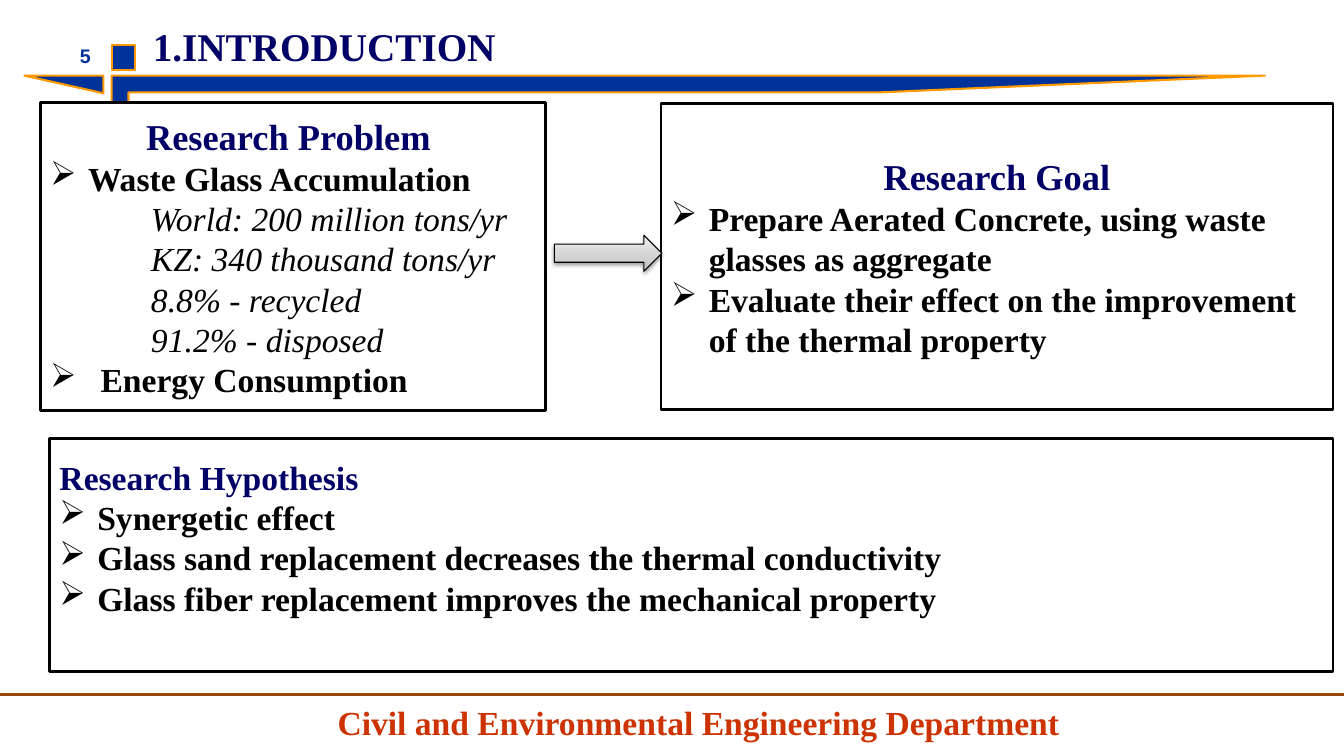
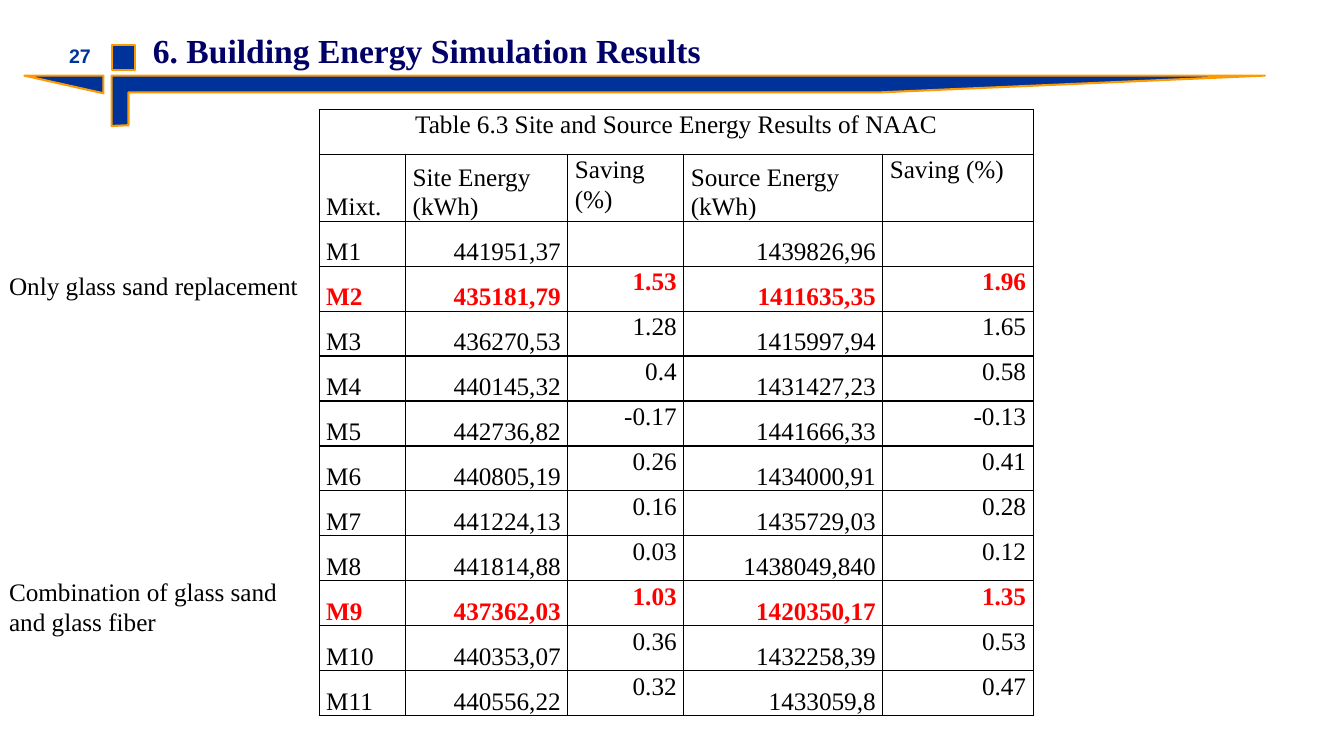
from dataclasses import dataclass

from pptx import Presentation, util as u
from pptx.dml.color import RGBColor
from pptx.enum import shapes, text
from pptx.oxml import parse_xml
from pptx.oxml.ns import nsdecls, qn

# Grid: 160 columns by 90 rows over the whole slide
COLUMNS, ROWS = 160, 90
CELL = u.Inches(7.5) // ROWS


@dataclass(frozen=True)
class Theme:
    serif: str = "Times New Roman"
    sans: str = "Arial"
    navy: str = "000066"
    blue: str = "003399"
    orange: str = "FF9900"
    brown: str = "974706"
    rust: str = "CC3300"
    red: str = "FF0000"
    black: str = "000000"
    white: str = "FFFFFF"
    title: int = 28
    heading: int = 26
    body: int = 24
    small: int = 18
    number: int = 14


THEME = Theme()
LEFT, CENTER, RIGHT = text.PP_ALIGN.LEFT, text.PP_ALIGN.CENTER, text.PP_ALIGN.RIGHT
TOP, MIDDLE, BOTTOM = text.MSO_ANCHOR.TOP, text.MSO_ANCHOR.MIDDLE, text.MSO_ANCHOR.BOTTOM


@dataclass(frozen=True)
class Line:
    """One paragraph; margin and hanging indent are in grid cells."""
    words: str
    size: int = THEME.body
    color: str = THEME.black
    bold: bool = False
    italic: bool = False
    font: str = THEME.serif
    align: int = LEFT
    margin: float = 0
    bullet: bool = False
    spacing: float = 1.0


def heading(words, size=THEME.heading, align=CENTER):
    return Line(words, size, THEME.navy, bold=True, align=align)


def bullet(words, margin=4.5):
    return Line(words, bold=True, margin=margin, bullet=True)


def detail(words):
    return Line(words, italic=True, margin=12)


def grid(*cells):
    return [round(cell * CELL) for cell in cells]


def color(value):
    return RGBColor.from_string(value)


# Text
def write(frame, lines, anchor=TOP, wrap=True):
    frame.word_wrap = wrap
    frame.auto_size = text.MSO_AUTO_SIZE.NONE
    frame.vertical_anchor = anchor
    for index, line in enumerate(lines):
        paragraph = frame.add_paragraph() if index else frame.paragraphs[0]
        write_paragraph(paragraph, line)


def write_paragraph(paragraph, line):
    paragraph.alignment = line.align
    paragraph.line_spacing = line.spacing
    properties = paragraph._p.get_or_add_pPr()
    if line.margin:
        margin, = grid(line.margin)
        properties.set("marL", str(margin))
        properties.set("indent", str(-margin if line.bullet else 0))
    if line.bullet:
        properties.append(parse_xml(f'<a:buChar {nsdecls("a")} char="➢"/>'))
    run = paragraph.add_run()
    run.text = line.words
    font = run.font
    font.name, font.size = line.font, u.Pt(line.size)
    font.bold, font.italic = line.bold, line.italic
    font.color.rgb = color(line.color)


def add_text(slide, place, line, anchor=TOP, wrap=True):
    box = slide.shapes.add_textbox(*grid(*place))
    write(box.text_frame, [line], anchor, wrap)


# Shapes
def add_shape(slide, kind, place, fill, outline, width):
    shape = slide.shapes.add_shape(kind, *grid(*place))
    shape.shadow.inherit = False
    shape.fill.solid()
    shape.fill.fore_color.rgb = color(fill)
    shape.line.color.rgb = color(outline)
    shape.line.width = u.Pt(width)
    return shape


def add_panel(slide, place, lines, spare_rows=0):
    panel = add_shape(slide, shapes.MSO_SHAPE.RECTANGLE, place,
                      THEME.white, THEME.black, 2)
    write(panel.text_frame, lines, MIDDLE)
    panel.text_frame.margin_bottom, = grid(0.6 + spare_rows)


def add_shaded_arrow(slide, place):
    arrow = add_shape(slide, shapes.MSO_SHAPE.RIGHT_ARROW, place,
                      THEME.white, THEME.black, 0.75)
    arrow.fill.gradient()
    arrow.fill.gradient_angle = 90
    properties = arrow.element.spPr
    stops = "".join(
        f'<a:gs pos="{share * 1000}"><a:srgbClr val="{value}"/></a:gs>'
        for share, value in ((0, "BDBDBD"), (35, "D1D1D1"), (100, "EEEEEE")))
    gradient = properties.find(qn("a:gradFill"))
    gradient.replace(gradient.find(qn("a:gsLst")),
                     parse_xml(f'<a:gsLst {nsdecls("a")}>{stops}</a:gsLst>'))
    properties.find(qn("a:effectLst")).append(parse_xml(
        f'<a:outerShdw {nsdecls("a")} blurRad="{u.Pt(3.1)}" dist="{u.Pt(1.6)}" '
        f'dir="5400000" rotWithShape="0"><a:srgbClr val="{THEME.black}">'
        '<a:alpha val="38000"/></a:srgbClr></a:outerShdw>'))


# Parts that the slides share
def add_slide(presentation, number, title, size, place):
    slide = presentation.slides.add_slide(presentation.slide_layouts[5])
    preset = shapes.MSO_SHAPE
    for kind, at, turn in ((preset.HALF_FRAME, (13.3, 9, 137.3, 6), 0),
                           (preset.RIGHT_TRIANGLE, (2.9, 9, 9.4, 2.1), 180),
                           (preset.RECTANGLE, (13.3, 5.35, 2.8, 3), 0)):
        add_shape(slide, kind, at, THEME.blue, THEME.orange, 1.5).rotation = turn
    add_text(slide, (4, 4.2, 8, 4.8),
             Line(number, THEME.number, THEME.blue, bold=True,
                  font=THEME.sans, align=RIGHT), MIDDLE)
    holder = slide.shapes.title
    holder.left, holder.top, holder.width, holder.height = grid(*place)
    write(holder.text_frame, [heading(title, size, LEFT)])
    return slide


def add_footer(slide, words):
    rule = slide.shapes.add_connector(
        shapes.MSO_CONNECTOR.STRAIGHT, *grid(0, 82.7, COLUMNS, 82.7))
    rule.line.color.rgb = color(THEME.brown)
    rule.line.width = u.Pt(2)
    rule._element.spPr.append(parse_xml(f'<a:effectLst {nsdecls("a")}/>'))
    add_text(slide, (39, 83.9, 89.2, 5),
             Line(words, color=THEME.rust, bold=True, spacing=0.8), wrap=False)


# Table
def format_cell(cell, words, align, anchor, strong):
    cell.margin_left, cell.margin_right = grid(0.84, 0.84)
    cell.margin_top = cell.margin_bottom = 0
    cell.vertical_anchor = anchor
    properties = cell._tc.get_or_add_tcPr()
    for side in "LRTB":
        properties.append(parse_xml(
            f'<a:ln{side} {nsdecls("a")} w="{u.Pt(1)}"><a:solidFill>'
            f'<a:srgbClr val="{THEME.black}"/></a:solidFill></a:ln{side}>'))
    cell.fill.background()
    if words:
        write_paragraph(cell.text_frame.paragraphs[0],
                        Line(words, THEME.small, THEME.red if strong else THEME.black,
                             bold=strong, align=align, spacing=1.07))


def add_results_table(slide, caption, header, records, widths, highlighted):
    rows = [(caption,) + ("",) * (len(header) - 1), header, *records]
    heights = [5.35, 8] + [5.35] * len(records)
    table = slide.shapes.add_table(
        len(rows), len(widths),
        *grid(38, 13, sum(widths), sum(heights))).table
    table.first_row = table.horz_banding = False
    for column, width in zip(table.columns, grid(*widths)):
        column.width = width
    for row, height in zip(table.rows, grid(*heights)):
        row.height = height
    for r, row in enumerate(rows):
        for c, words in enumerate(row):
            align = CENTER if r == 0 else RIGHT if r > 1 and c else LEFT
            anchor = TOP if r == 0 or header[c].startswith("Saving") else BOTTOM
            format_cell(table.cell(r, c), words, align, anchor, row[0] in highlighted)
    table.cell(0, 0).merge(table.cell(0, len(header) - 1))


# Slides
def build_introduction(presentation):
    slide = add_slide(presentation, "5", "1.INTRODUCTION", THEME.title,
                      (17, 2, 50, 10.6))
    add_footer(slide, "Civil and Environmental Engineering Department")
    add_panel(slide, (4.8, 12.2, 60.2, 36.7), [
        heading("Research Problem "),
        bullet("Waste Glass Accumulation"),
        detail("World: 200 million tons/yr"),
        detail("KZ: 340 thousand tons/yr"),
        detail("8.8% - recycled"),
        detail("91.2% - disposed"),
        bullet("Energy Consumption", 6)])
    add_panel(slide, (78.7, 12.3, 80, 36.5), [
        heading("Research Goal"),
        bullet("Prepare Aerated Concrete, using waste glasses as aggregate"),
        bullet("Evaluate their effect on the improvement of the thermal property")])
    add_shaded_arrow(slide, (66, 28, 12.8, 4.3))
    add_panel(slide, (5.9, 52.2, 152.8, 27.7), [
        heading("Research Hypothesis", THEME.body, LEFT),
        bullet("Synergetic effect"),
        bullet("Glass sand replacement decreases the thermal conductivity"),
        bullet("Glass fiber replacement improves the mechanical property")],
        spare_rows=4.2)


def build_results(presentation):
    slide = add_slide(presentation, "27", "6. Building Energy Simulation Results",
                      THEME.body, (17, 3, 72, 6))
    add_results_table(
        slide, "Table 6.3 Site and Source Energy Results of NAAC",
        ("Mixt.", "Site Energy (kWh)", "Saving (%)", "Source Energy (kWh)", "Saving (%)"),
        [("M1", "441951,37", "", "1439826,96", ""),
         ("M2", "435181,79", "1.53", "1411635,35", "1.96"),
         ("M3", "436270,53", "1.28", "1415997,94", "1.65"),
         ("M4", "440145,32", "0.4", "1431427,23", "0.58"),
         ("M5", "442736,82", "-0.17", "1441666,33", "-0.13"),
         ("M6", "440805,19", "0.26", "1434000,91", "0.41"),
         ("M7", "441224,13", "0.16", "1435729,03", "0.28"),
         ("M8", "441814,88", "0.03", "1438049,840", "0.12"),
         ("M9", "437362,03", "1.03", "1420350,17", "1.35"),
         ("M10", "440353,07", "0.36", "1432258,39", "0.53"),
         ("M11", "440556,22", "0.32", "1433059,8", "0.47")],
        widths=(10.3, 19.3, 13.8, 23.7, 17.9), highlighted=("M2", "M9"))
    for row, rows, words in ((31.6, 4.8, "Only glass sand replacement"),
                             (68, 8.5, "Combination of glass sand and glass fiber")):
        add_text(slide, (-0.1, row, 37.9, rows), Line(words, THEME.small))


def main():
    presentation = Presentation()
    presentation.slide_width, presentation.slide_height = grid(COLUMNS, ROWS)
    build_introduction(presentation)
    build_results(presentation)
    presentation.save("out.pptx")


if __name__ == "__main__":
    main()
